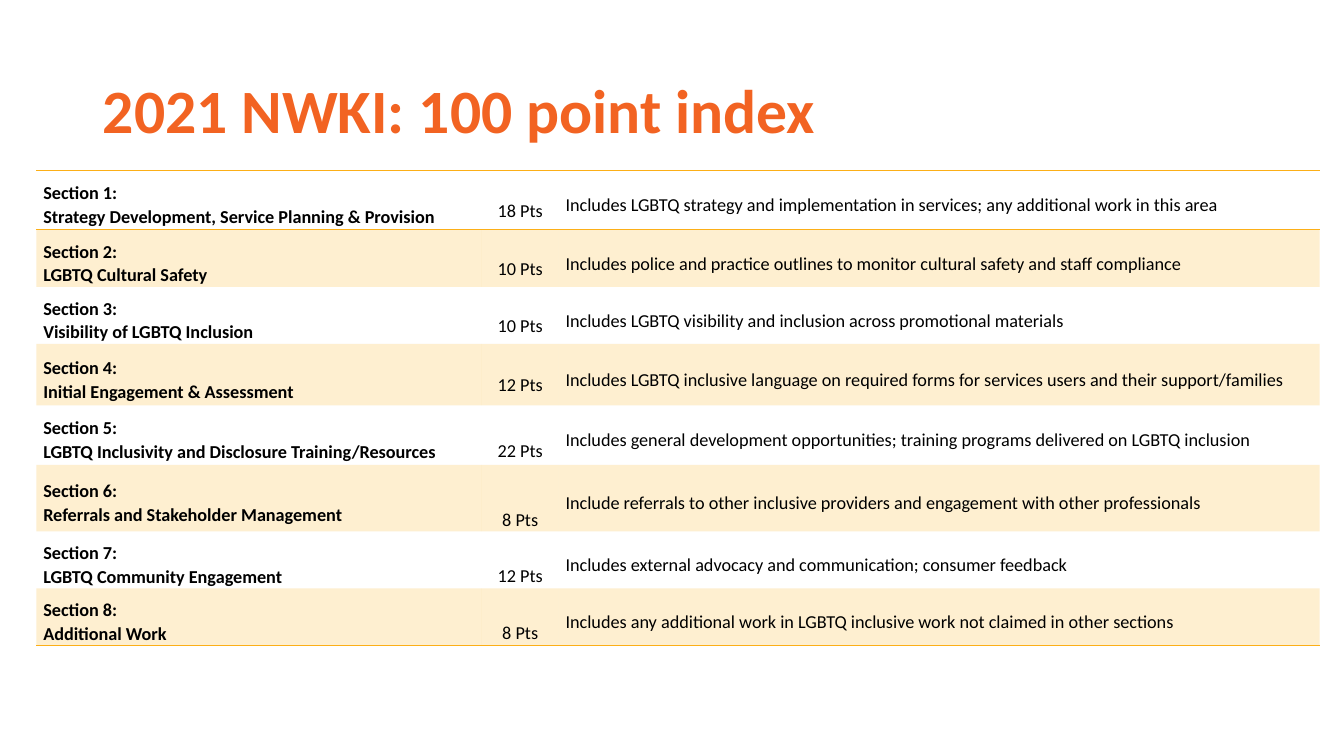
from lxml import etree
from pptx import Presentation
from pptx.dml.color import RGBColor
from pptx.enum.text import MSO_ANCHOR as ANCHOR, PP_ALIGN as ALIGN
from pptx.oxml import parse_xml
from pptx.oxml.ns import nsdecls, qn
from pptx.util import Inches, Pt

GOLD = "FCAF17"
NO_STYLE = "{2D5ABB26-0587-4C30-8999-92F81FD0307C}"
SECTIONS = [  # name, points, line spacing of points, description, row height
    ("Strategy Development, Service Planning & Provision", 18, 2.0,
     "Includes LGBTQ strategy and implementation in services; any additional work in this area", 0.59),
    ("LGBTQ Cultural Safety", 10, 2.0,
     "Includes police and practice outlines to monitor cultural safety and staff compliance", 0.5),
    ("Visibility of LGBTQ Inclusion", 10, 2.0,
     "Includes LGBTQ visibility and inclusion across promotional materials", 0.54),
    ("Initial Engagement & Assessment", 12, 2.0,
     "Includes LGBTQ inclusive language on required forms for services users and their support/families", 0.61),
    ("LGBTQ Inclusivity and Disclosure Training/Resources", 22, 2.5,
     "Includes general development opportunities; training programs delivered on LGBTQ inclusion", 0.59),
    ("Referrals and Stakeholder Management", 8, 3.0,
     "Include referrals to other inclusive providers and engagement with other professionals", 0.6),
    ("LGBTQ Community Engagement", 12, 2.5,
     "Includes external advocacy and communication; consumer feedback", 0.55),
    ("Additional Work", 8, 2.5,
     "Includes any additional work in LGBTQ inclusive work not claimed in other sections", 0.54),
]


def add_text(p, text, spacing, align=ALIGN.LEFT, color="000000", **font):
    p.alignment, p.line_spacing = align, spacing
    r = p.add_run()
    r.text = text
    for name, value in {"name": "Calibri", "size": Pt(13), "bold": False, **font}.items():
        setattr(r.font, name, value)
    r.font.color.rgb = RGBColor.from_string(color)


def add_borders(cell, tags):
    """Draw gold lines on the given sides, in schema order and before the fill."""
    for i, tag in enumerate(tags):
        cell._tc.get_or_add_tcPr().insert(i, parse_xml(
            f'<a:{tag} {nsdecls("a")} w="12700"><a:solidFill>'
            f'<a:srgbClr val="{GOLD}"/></a:solidFill></a:{tag}>'))


prs = Presentation()
prs.slide_width, prs.slide_height = Inches(13.33), Inches(7.5)
s = prs.slides.add_slide(prs.slide_layouts[5])

title = s.shapes.title
title.left, title.top = Inches(0.92), Inches(0.4)
title.width, title.height = Inches(11.5), Inches(1.45)
title.text_frame.vertical_anchor = ANCHOR.MIDDLE
add_text(title.text_frame.paragraphs[0], "2021 NWKI: 100 point index", 0.9,
         color="F26322", size=Pt(44), bold=True)

frame = s.shapes.add_table(len(SECTIONS), 3, Inches(0.36), Inches(1.69), Inches(12.73), Inches(4.52))
table = frame.table
table._tbl.tblPr.find(qn("a:tableStyleId")).text = NO_STYLE
table.first_row = table.horz_banding = False
for column, width in zip(table.columns, (4.42, 0.76, 7.55)):
    column.width = Inches(width)

for i, (name, points, spacing, description, height) in enumerate(SECTIONS):
    row = table.rows[i]
    row.height = Inches(height)
    borders = {0: ("lnT", "lnB"), len(SECTIONS) - 1: ("lnB",)}.get(i, ())
    for cell in row.cells:
        cell.vertical_anchor = ANCHOR.MIDDLE
        cell.margin_left = cell.margin_right = Inches(0.07)
        cell.margin_top = cell.margin_bottom = 0
        if i % 2:
            cell.fill.solid()
            cell.fill.fore_color.rgb = RGBColor.from_string(GOLD)
            tint = cell._tc.tcPr.find(".//" + qn("a:srgbClr"))
            etree.SubElement(tint, qn("a:alpha"), val="20000")
        else:
            cell.fill.background()
        add_borders(cell, borders)

    section, score, detail = (cell.text_frame for cell in row.cells)
    add_text(section.paragraphs[0], f"Section {i + 1}:", 1.5, bold=True)
    add_text(section.add_paragraph(), name, 1.07, bold=True)
    add_text(score.paragraphs[0], f"{points} Pts", spacing, ALIGN.CENTER)
    add_text(detail.paragraphs[0], description, 1.5)

prs.save("out.pptx")
